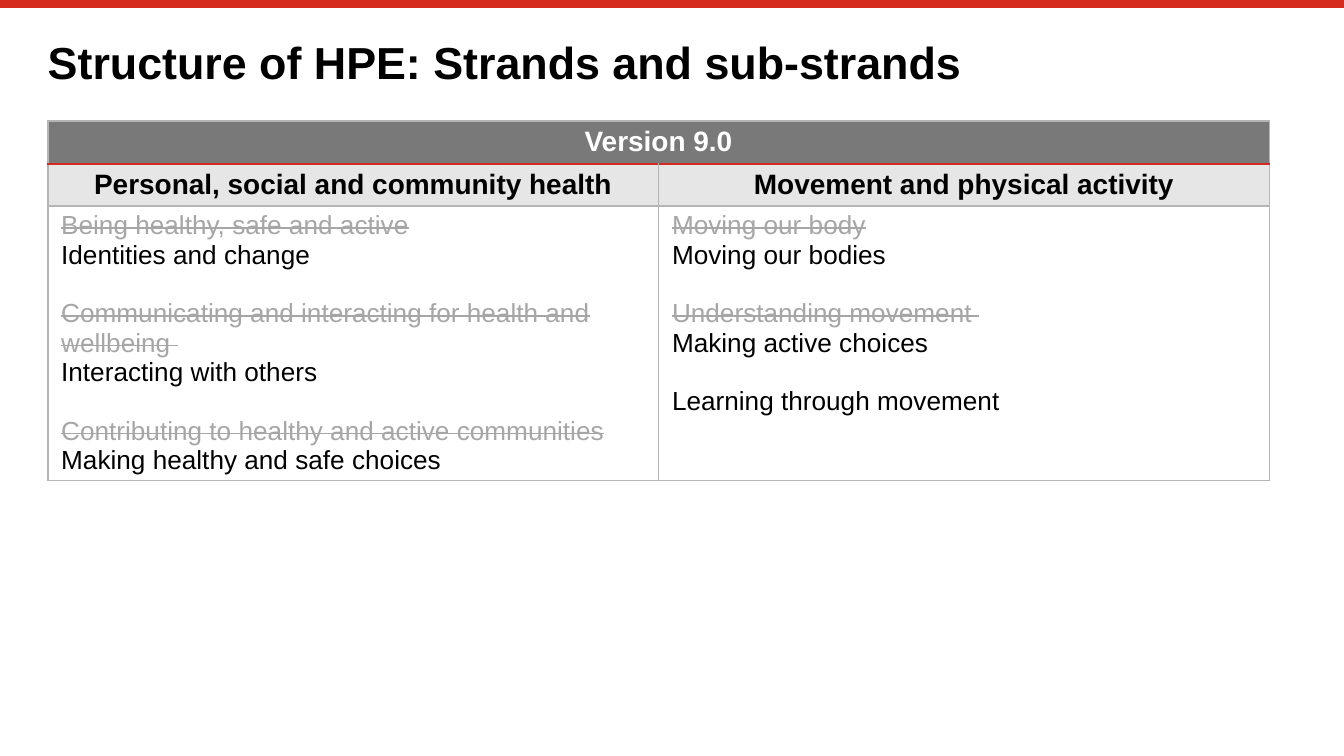
from lxml import etree
from pptx import Presentation
from pptx.dml.color import RGBColor
from pptx.enum.shapes import MSO_CONNECTOR
from pptx.enum.text import MSO_ANCHOR, PP_ALIGN
from pptx.oxml.ns import qn
from pptx.util import Pt

PX = 4572  # EMU per px, 200 px to the inch
STRAIGHT = MSO_CONNECTOR.STRAIGHT
LEFT, CENTER = PP_ALIGN.LEFT, PP_ALIGN.CENTER
TOP, MIDDLE = MSO_ANCHOR.TOP, MSO_ANCHOR.MIDDLE
TITLE_ONLY = 5

FONT = "Arial"
COLORS = {
    "red": "D52B1E",
    "black": "000000",
    "white": "FFFFFF",
    "version": "797979",
    "strand": "E6E6E6",
    "border": "B5B5B5",
    "retired": "A6A6A6",
}

# Each strand holds groups of (retired sub-strand, current sub-strand)
STRANDS = {
    "Personal, social and community health": [
        ("Being healthy, safe and active", "Identities and change"),
        ("Communicating and interacting for health and wellbeing ",
         "Interacting with others"),
        ("Contributing to healthy and active communities",
         "Making healthy and safe choices"),
    ],
    "Movement and physical activity": [
        ("Moving our body", "Moving our bodies"),
        ("Understanding movement ", "Making active choices"),
        (None, "Learning through movement"),
    ],
}
COLUMN_WIDTH = 909
ROW_HEIGHTS = [64, 62, 408]
GROUP_GAP = Pt(15.7)


def px(length):
    return length * PX


def rgb(name):
    return RGBColor.from_string(COLORS[name])


def style(paragraph, size, color, bold=False, align=LEFT):
    paragraph.alignment = align
    font = paragraph.font
    font.name, font.size, font.bold = FONT, Pt(size), bold
    font.color.rgb = rgb(color)


def add_top_rule(slide, width):
    rule = slide.shapes.add_connector(STRAIGHT, 0, px(6), width, px(6))
    rule.line.color.rgb = rgb("red")
    rule.line.width = Pt(4.2)
    etree.SubElement(rule._element.spPr, qn("a:effectLst"))


def set_title(slide, text):
    title = slide.shapes.title
    title.left, title.top, title.width, title.height = map(px, (71, 57, 1858, 78))
    frame = title.text_frame
    frame.margin_left = frame.margin_right = 0
    frame.margin_top = frame.margin_bottom = 0
    frame.vertical_anchor = MIDDLE
    frame.word_wrap = True
    frame.text = text
    paragraph = frame.paragraphs[0]
    paragraph.line_spacing = 0.9
    style(paragraph, 24, "black", bold=True)


def set_borders(cell, **special):
    """Draw the four edges in grey, or red where an edge is named so."""
    properties = cell._tc.get_or_add_tcPr()
    for index, edge in enumerate(("lnL", "lnR", "lnT", "lnB")):
        color = special.get(edge, "border")
        width = Pt(1.5 if color == "red" else 1)
        line = etree.Element(qn(f"a:{edge}"), w=str(int(width)))
        fill = etree.SubElement(line, qn("a:solidFill"))
        etree.SubElement(fill, qn("a:srgbClr"), val=COLORS[color])
        properties.insert(index, line)


def format_cell(cell, fill, anchor=TOP, **borders):
    cell.margin_left = cell.margin_right = px(20)
    cell.margin_top = cell.margin_bottom = px(8)
    cell.vertical_anchor = anchor
    cell.fill.solid()
    cell.fill.fore_color.rgb = rgb(fill)
    set_borders(cell, **borders)


def fill_heading(cell, text, color):
    cell.text = text
    style(cell.text_frame.paragraphs[0], 15, color, bold=True, align=CENTER)


def fill_sub_strands(cell, groups):
    frame = cell.text_frame
    paragraph = frame.paragraphs[0]
    for group_index, (retired, current) in enumerate(groups):
        lines = [(text, text is retired) for text in (retired, current) if text]
        for line_index, (text, is_retired) in enumerate(lines):
            if group_index or line_index:
                paragraph = frame.add_paragraph()
            if group_index and line_index == 0:
                paragraph.space_before = GROUP_GAP
            run = paragraph.add_run()
            run.text = text
            style(paragraph, 14, "retired" if is_retired else "black")
            if is_retired:
                run._r.get_or_add_rPr().set("strike", "sngStrike")


def add_strands_table(slide):
    table = slide.shapes.add_table(
        len(ROW_HEIGHTS), len(STRANDS), px(71), px(180),
        px(COLUMN_WIDTH * len(STRANDS)), px(sum(ROW_HEIGHTS))).table
    table.first_row = table.horz_banding = False
    for row, height in zip(table.rows, ROW_HEIGHTS):
        row.height = px(height)

    # One column per strand: version band, strand name, sub-strands
    for index, (strand, groups) in enumerate(STRANDS.items()):
        table.columns[index].width = px(COLUMN_WIDTH)
        version, heading, body = (table.cell(row, index) for row in range(3))
        format_cell(version, "version", lnB="red")
        format_cell(heading, "strand", MIDDLE, lnT="red")
        format_cell(body, "white")
        fill_heading(heading, strand, "black")
        fill_sub_strands(body, groups)

    version = table.cell(0, 0)
    version.merge(table.cell(0, len(STRANDS) - 1))
    fill_heading(version, "Version 9.0", "white")


def main():
    presentation = Presentation()
    presentation.slide_width, presentation.slide_height = px(2000), px(1125)
    slide = presentation.slides.add_slide(presentation.slide_layouts[TITLE_ONLY])
    add_top_rule(slide, presentation.slide_width)
    set_title(slide, "Structure of HPE: Strands and sub-strands")
    add_strands_table(slide)
    presentation.save("out.pptx")


if __name__ == "__main__":
    main()
